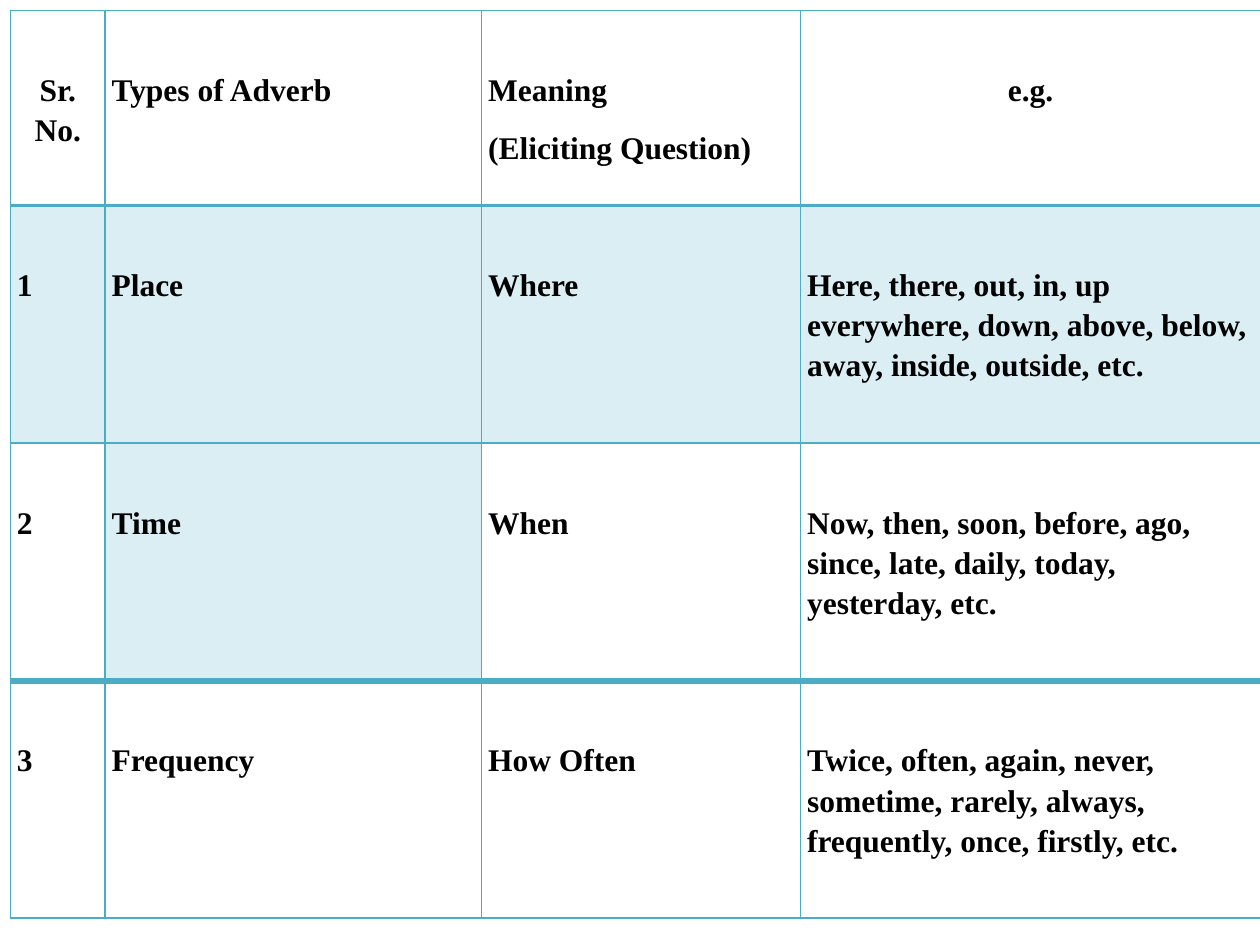
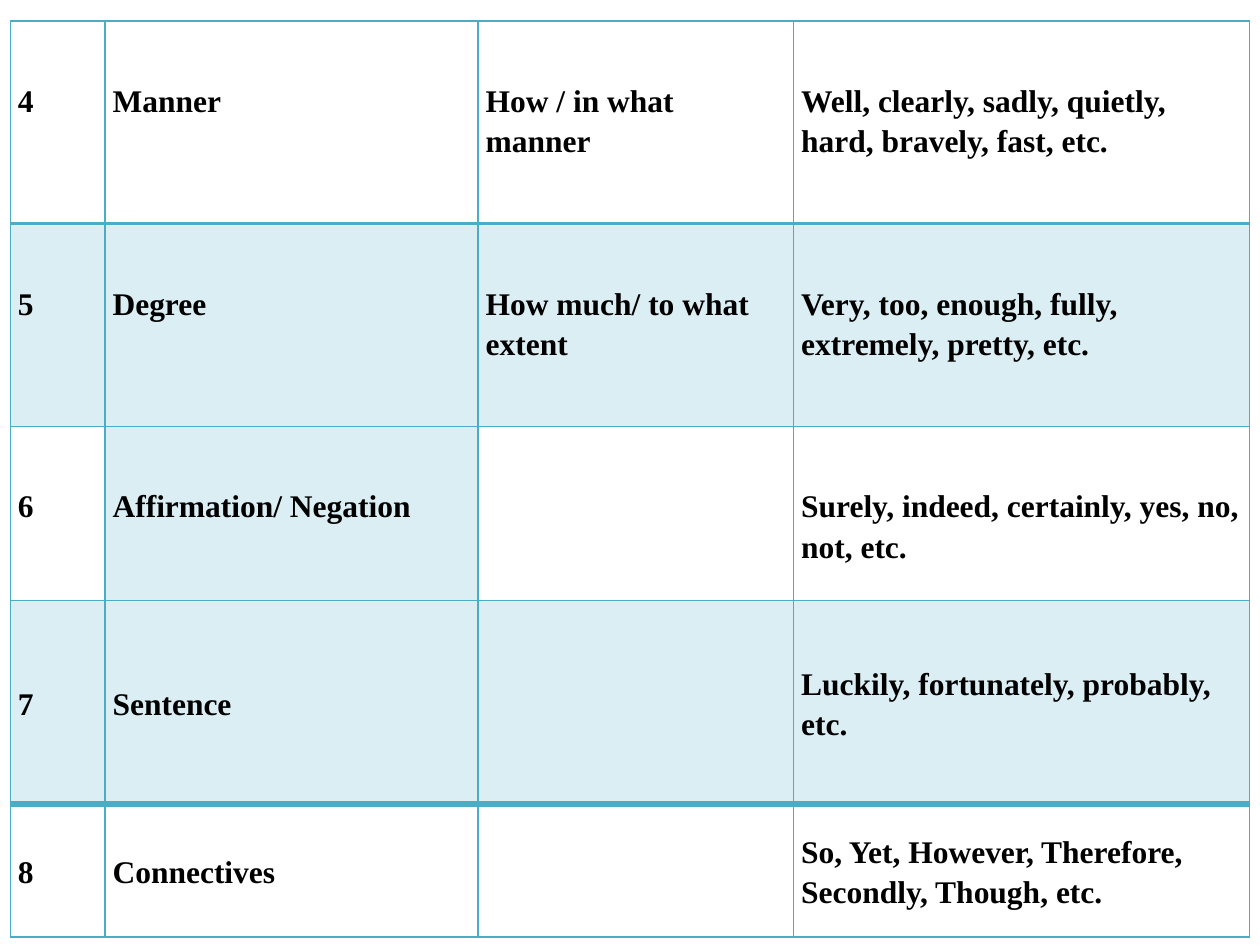
from dataclasses import dataclass

from lxml.etree import SubElement as add_element
from pptx import Presentation
from pptx.dml.color import RGBColor as Rgb
from pptx.enum.text import MSO_ANCHOR as Anchor, PP_ALIGN as Align
from pptx.oxml.ns import qn
from pptx.util import Cm, Pt

COLORS = {"line": "4BACC6", "shade": "DBEEF4", "plain": "FFFFFF", "text": "000000"}
FONT = "Times New Roman"
TOP_INSET = 1.17  # drops the text one line below the top border
THIN, MEDIUM, THICK = 1, 2, 4
ALL_COLUMNS = {0, 1, 2, 3}
TYPE_COLUMN = {1}


@dataclass
class Row:
    height: float
    texts: tuple
    shaded: frozenset = frozenset()
    top: int = THIN
    middle: bool = False
    centred: frozenset = frozenset()


# Rows of the adverb table, split over two slides
FIRST_ROWS = [
    Row(3.93, ("Sr. No.", "Types of Adverb", "Meaning\n(Eliciting Question)", "e.g."),
        centred={0, 3}),
    Row(4.79, ("1", "Place", "Where",
               "Here, there, out, in, up everywhere, down, above, below, "
               "away, inside, outside, etc."),
        shaded=ALL_COLUMNS, top=MEDIUM),
    Row(4.79, ("2", "Time", "When",
               "Now, then, soon, before, ago, since, late, daily, today, "
               "yesterday, etc."),
        shaded=TYPE_COLUMN),
    Row(4.79, ("3", "Frequency", "How Often",
               "Twice, often, again, never, sometime, rarely, always, "
               "frequently, once, firstly, etc."),
        top=THICK),
]
SECOND_ROWS = [
    Row(4.09, ("4", "Manner", "How / in what manner",
               "Well, clearly, sadly, quietly, hard, bravely, fast, etc.")),
    Row(4.09, ("5", "Degree", "How much/ to what extent",
               "Very, too, enough, fully, extremely, pretty, etc."),
        shaded=ALL_COLUMNS, top=MEDIUM),
    Row(3.51, ("6", "Affirmation/ Negation", "",
               "Surely, indeed, certainly, yes, no, not, etc."),
        shaded=TYPE_COLUMN),
    Row(4.09, ("7", "Sentence", "", "Luckily, fortunately, probably, etc."),
        shaded=ALL_COLUMNS, middle=True),
    Row(2.69, ("8", "Connectives", "",
               "So, Yet, However, Therefore, Secondly, Though, etc."),
        top=THICK, middle=True),
]


def write_text(frame, text, size=18, bold=True, color="text", align=Align.LEFT):
    """Write one paragraph for each line of text."""
    for index, line in enumerate(text.split("\n")):
        para = frame.paragraphs[0] if index == 0 else frame.add_paragraph()
        para.alignment = align
        para.line_spacing = 1.15
        para.space_after = Pt(10)
        span = para.add_run()
        span.text = line
        span.font.name = FONT
        span.font.size = Pt(size)
        span.font.bold = bold
        span.font.color.rgb = Rgb.from_string(COLORS[color])


def set_borders(cell, top, bottom):
    properties = cell._tc.get_or_add_tcPr()
    widths = {"lnL": THIN, "lnR": THIN, "lnT": top, "lnB": bottom}
    for tag, width in widths.items():
        line = add_element(properties, qn(f"a:{tag}"), w=str(Pt(width)))
        fill = add_element(line, qn("a:solidFill"))
        add_element(fill, qn("a:srgbClr"), val=COLORS["line"])


def format_cell(cell, row, column, bottom, side_inset):
    cell.margin_left = cell.margin_right = Cm(side_inset)
    cell.margin_top = Cm(0 if row.middle else TOP_INSET)
    cell.margin_bottom = 0
    cell.vertical_anchor = Anchor.MIDDLE if row.middle else Anchor.TOP
    set_borders(cell, row.top, bottom)
    shade = "shade" if column in row.shaded else "plain"
    cell.fill.solid()
    cell.fill.fore_color.rgb = Rgb.from_string(COLORS[shade])


def add_adverb_table(page, rows, left, top, widths, side_inset):
    height = sum(row.height for row in rows)
    box = page.shapes.add_table(len(rows), len(widths), Cm(left), Cm(top),
                                Cm(sum(widths)), Cm(height))
    table = box.table
    table.first_row = table.horz_banding = False
    for column, width in zip(table.columns, widths):
        column.width = Cm(width)
    # Each row's bottom border matches the top border of the next row
    bottoms = [row.top for row in rows[1:]] + [THIN]
    for number, (row, bottom) in enumerate(zip(rows, bottoms)):
        table.rows[number].height = Cm(row.height)
        for column, text in enumerate(row.texts):
            cell = table.cell(number, column)
            format_cell(cell, row, column, bottom, side_inset)
            if text:
                align = Align.CENTER if column in row.centred else Align.LEFT
                write_text(cell.text_frame, text, align=align)


def main():
    deck = Presentation()
    deck.slide_width, deck.slide_height = Cm(25.4), Cm(19.05)
    blank = deck.slide_layouts[6]

    # Header and adverbs 1 to 3
    add_adverb_table(deck.slides.add_slide(blank), FIRST_ROWS, left=0.21, top=0.21,
                     widths=(1.91, 7.59, 6.43, 9.27), side_inset=0.13)
    # Adverbs 4 to 8
    add_adverb_table(deck.slides.add_slide(blank), SECOND_ROWS, left=0.21, top=0.42,
                     widths=(1.91, 7.52, 6.36, 9.19), side_inset=0.15)
    deck.save("out.pptx")


if __name__ == "__main__":
    main()
